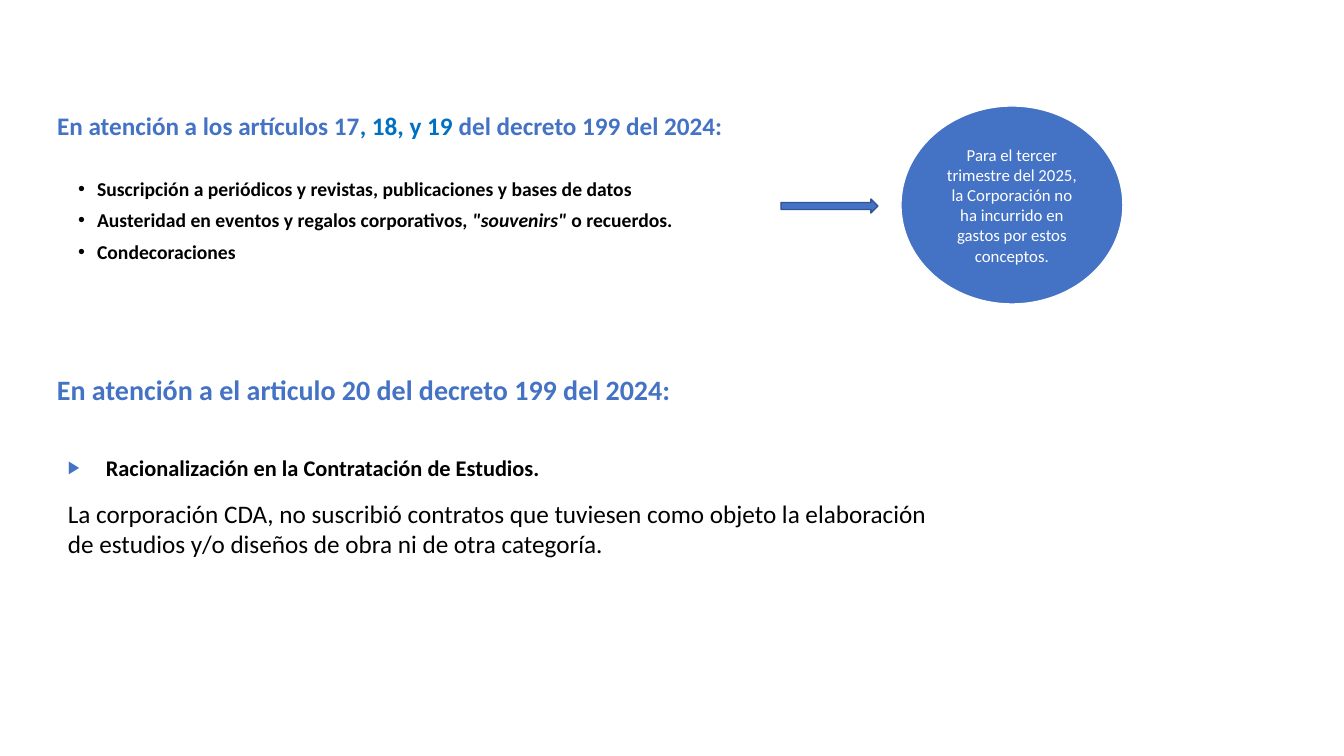
from lxml import etree
from pptx import Presentation
from pptx.dml.color import RGBColor
from pptx.enum.shapes import MSO_SHAPE
from pptx.enum.text import MSO_ANCHOR, MSO_AUTO_SIZE, PP_ALIGN
from pptx.oxml.ns import qn
from pptx.util import Emu, Pt

ARROW, ELLIPSE = MSO_SHAPE.RIGHT_ARROW, MSO_SHAPE.OVAL
TOP, MIDDLE = MSO_ANCHOR.TOP, MSO_ANCHOR.MIDDLE
LEFT, CENTER = PP_ALIGN.LEFT, PP_ALIGN.CENTER
NO_AUTOFIT = MSO_AUTO_SIZE.NONE

BLUE = RGBColor(0x44, 0x72, 0xC4)
BRIGHT_BLUE = RGBColor(0x00, 0x70, 0xC0)
DARK_BLUE = RGBColor(0x32, 0x54, 0x91)
BLACK = RGBColor(0x00, 0x00, 0x00)
WHITE = RGBColor(0xFF, 0xFF, 0xFF)

EMU_PER_PX = 914400 / 100.8


def px(length):
    return Emu(round(length * EMU_PER_PX))


class SlideBuilder:
    """Holds the text style and the current slide, and adds each kind of element."""

    font_name = "Calibri"

    def __init__(self, presentation):
        self.slide = presentation.slides.add_slide(presentation.slide_layouts[1])

    def place(self, shape, box):
        for name, length in zip(("left", "top", "width", "height"), box):
            setattr(shape, name, px(length))

    def bullet(self, paragraph, character, indent, color, percent):
        properties = paragraph._p.get_or_add_pPr()
        properties.set("marL", str(px(indent)))
        properties.set("indent", str(-px(indent)))
        bullet_color = etree.SubElement(properties, qn("a:buClr"))
        etree.SubElement(bullet_color, qn("a:srgbClr"), val=str(color))
        etree.SubElement(properties, qn("a:buSzPct"), val=str(percent * 1000))
        etree.SubElement(properties, qn("a:buFont"), typeface="Arial")
        etree.SubElement(properties, qn("a:buChar"), char=character)

    def fill_text(self, shape, paragraphs, size, color=BLACK, bold=False, anchor=TOP,
                  bullet=None, **paragraph_format):
        frame = shape.text_frame
        frame.word_wrap = True
        frame.auto_size = NO_AUTOFIT
        frame.vertical_anchor = anchor
        for index, runs in enumerate(paragraphs):
            paragraph = frame.add_paragraph() if index else frame.paragraphs[0]
            if bullet:
                self.bullet(paragraph, *bullet)
            values = {"alignment": LEFT, "space_before": Pt(0), **paragraph_format}
            if index == 0:
                values["space_before"] = Pt(0)
            for name, value in values.items():
                setattr(paragraph, name, value)
            for text, changes in runs:
                run = paragraph.add_run()
                run.text = text
                values = {"name": self.font_name, "size": Pt(size), "bold": bold,
                          "italic": changes.get("italic", False)}
                for name, value in values.items():
                    setattr(run.font, name, value)
                run.font.color.rgb = changes.get("color", color)

    def placeholder(self, index, box, paragraphs, size, **style):
        shape = self.slide.placeholders[index]
        self.place(shape, box)
        self.fill_text(shape, paragraphs, size, **style)

    def text(self, box, text, size, **style):
        shape = self.slide.shapes.add_textbox(*map(px, box))
        self.fill_text(shape, [[(text, {})]], size, **style)

    def shape(self, kind, box, line_color):
        shape = self.slide.shapes.add_shape(kind, *map(px, box))
        shape.shadow.inherit = False
        shape.fill.solid()
        shape.fill.fore_color.rgb = BLUE
        shape.line.color.rgb = line_color
        shape.line.width = Pt(1)
        return shape


def main():
    presentation = Presentation()
    presentation.slide_width, presentation.slide_height = px(1344), px(756)
    builder = SlideBuilder(presentation)

    builder.placeholder(1, (68, 174, 872, 194), [
        [("Suscripción a periódicos y revistas, publicaciones y bases de datos", {})],
        [("Austeridad en eventos y regalos corporativos, ", {}),
         ('"souvenirs"', {"italic": True}),
         (" o recuerdos.", {})],
        [("Condecoraciones", {})],
    ], 14, bold=True, bullet=("•", 19, BLACK, 100),
        line_spacing=0.9, space_before=Pt(7.5))

    builder.placeholder(0, (47, 109, 831, 37), [[
        ("En atención a los artículos 17", {}),
        (", 18, y 19 ", {"color": BRIGHT_BLUE}),
        ("del decreto 199 del 2024:", {}),
    ]], 18, color=BLUE, bold=True, anchor=MIDDLE, line_spacing=0.9)

    builder.shape(ARROW, (781, 199, 97, 14), DARK_BLUE)

    builder.text((47, 368, 860, 44),
                 "En atención a el articulo 20 del decreto 199 del 2024:",
                 20, color=BLUE, bold=True)
    builder.text((58, 493, 881, 72),
                 "La corporación CDA, no suscribió contratos que tuviesen como objeto "
                 "la elaboración de estudios y/o diseños de obra ni de otra categoría.", 18)
    builder.text((58, 449, 576, 44), "Racionalización en la Contratación de Estudios.",
                 16, bold=True, bullet=("▶", 38, BLUE, 80))

    conclusion = builder.shape(ELLIPSE, (901, 106, 222, 198), WHITE)
    builder.fill_text(conclusion, [[
        ("Para el tercer trimestre del 2025, la Corporación no ha incurrido en "
         "gastos por estos conceptos.", {}),
    ]], 12, color=WHITE, anchor=MIDDLE, alignment=CENTER)

    presentation.save("out.pptx")


if __name__ == "__main__":
    main()
